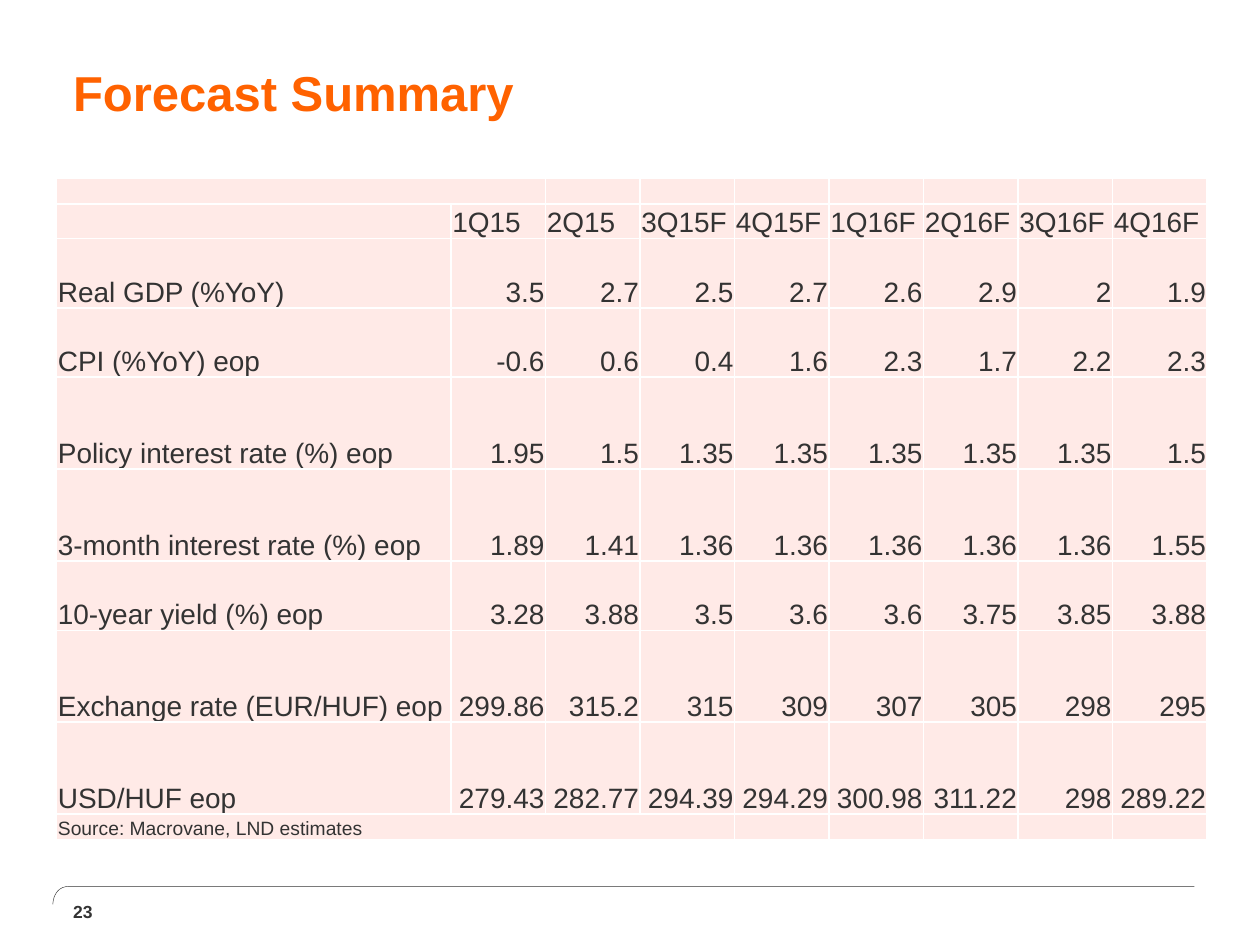
import pptx
import pptx.dml.color
import pptx.enum.text
import pptx.oxml
import pptx.oxml.ns
import pptx.util
from lxml import etree

COLORS = {"orange": "FF6200", "text": "333333", "cell": "FFEAE7", "border": "FFFFFF"}
FONT = "Arial"
SLIDE_WIDTH = pptx.util.Inches(10)
SLIDE_HEIGHT = pptx.util.Inches(7.5)

QUARTERS = ["1Q15", "2Q15", "3Q15F", "4Q15F", "1Q16F", "2Q16F", "3Q16F", "4Q16F"]
FORECASTS = [
    ("Real GDP (%YoY)", "3.5 2.7 2.5 2.7 2.6 2.9 2 1.9"),
    ("CPI (%YoY) eop", "-0.6 0.6 0.4 1.6 2.3 1.7 2.2 2.3"),
    ("Policy interest rate (%) eop", "1.95 1.5 1.35 1.35 1.35 1.35 1.35 1.5"),
    ("3-month interest rate (%) eop", "1.89 1.41 1.36 1.36 1.36 1.36 1.36 1.55"),
    ("10-year yield (%) eop", "3.28 3.88 3.5 3.6 3.6 3.75 3.85 3.88"),
    ("Exchange rate (EUR/HUF) eop", "299.86 315.2 315 309 307 305 298 295"),
    ("USD/HUF eop", "279.43 282.77 294.39 294.29 300.98 311.22 298 289.22"),
]
SOURCE = "Source: Macrovane, LND estimates"

# Shares of the slide, in percent of its width or height
LABEL_WIDTH, QUARTER_WIDTH = 31.3, 7.5
THIN, MEDIUM, TALL = 2.67, 7.33, 9.73
ROW_HEIGHTS = [THIN, THIN, MEDIUM, MEDIUM, TALL, TALL, MEDIUM, TALL, TALL, THIN]


def across(percent):
    return int(SLIDE_WIDTH * percent / 100)


def down(percent):
    return int(SLIDE_HEIGHT * percent / 100)


def rgb(name):
    return pptx.dml.color.RGBColor.from_string(COLORS[name])


def set_font(paragraph, size, color, bold=False):
    font = paragraph.font
    font.name = FONT
    font.size = pptx.util.Pt(size)
    font.bold = bold
    font.color.rgb = rgb(color)


def add_label(slide, box, text, size, color):
    """Place one bold, vertically centred line of text; return its paragraph."""
    left, top, width, height = box
    label = slide.shapes.add_textbox(across(left), down(top), across(width), down(height))
    frame = label.text_frame
    frame.word_wrap = True
    frame.vertical_anchor = pptx.enum.text.MSO_ANCHOR.MIDDLE
    frame.margin_left = frame.margin_right = frame.margin_top = frame.margin_bottom = 0
    paragraph = frame.paragraphs[0]
    paragraph.text = text
    set_font(paragraph, size, color, bold=True)
    return paragraph


def add_title(slide, box):
    paragraph = add_label(slide, box, "Forecast Summary", 28, "orange")
    paragraph.line_spacing = pptx.util.Pt(28)


def add_footer(slide, box):
    """Draw a rule whose left end bends down, with the page number below it."""
    left, top, width, height = box
    bend_width = 1.3
    steps = [step / 12 for step in range(13)]
    bend = [
        (across(left + bend_width * (1 - t) ** 3), down(top + height * (3 * t**2 - 2 * t**3)))
        for t in steps
    ]
    builder = slide.shapes.build_freeform(across(left + width), down(top))
    builder.add_line_segments(bend, close=False)
    rule = builder.convert_to_shape()
    rule.shadow.inherit = False
    rule.fill.background()
    rule.line.color.rgb = rgb("text")
    rule.line.width = pptx.util.Pt(0.25)
    add_label(slide, (left + 1.6, top + 1.2, 4.1, 2.8), "23", 10, "text")


def style_cell(cell):
    cell.fill.solid()
    cell.fill.fore_color.rgb = rgb("cell")
    cell.vertical_anchor = pptx.enum.text.MSO_ANCHOR.BOTTOM
    cell.margin_left = cell.margin_right = cell.margin_top = pptx.util.Inches(0.01)
    cell.margin_bottom = 0
    properties = cell._tc.get_or_add_tcPr()
    for index, side in enumerate(("lnL", "lnR", "lnT", "lnB")):
        border = pptx.oxml.parse_xml(
            f'<a:{side} {pptx.oxml.ns.nsdecls("a")} w="12700"><a:solidFill>'
            f'<a:srgbClr val="{COLORS["border"]}"/></a:solidFill></a:{side}>'
        )
        properties.insert(index, border)


def write_cell(cell, text, size, alignment):
    paragraph = cell.text_frame.paragraphs[0]
    if text:
        paragraph.text = text
        paragraph.alignment = alignment
        set_font(paragraph, size, "text")
    else:
        # A small end mark keeps an empty cell from stretching its row
        etree.SubElement(paragraph._p, pptx.oxml.ns.qn("a:endParaRPr"), sz="800")


def add_forecast_table(slide, box):
    left, top, width, height = box
    blanks = [""] * len(QUARTERS)
    rows = [["", *blanks], ["", *QUARTERS]]
    rows += [[label, *values.split()] for label, values in FORECASTS]
    rows.append([SOURCE, *blanks])
    last = len(rows) - 1

    frame = slide.shapes.add_table(
        len(rows), len(rows[0]), across(left), down(top), across(width), down(height)
    )
    table = frame.table
    table.first_row = table.horz_banding = False
    for index, column in enumerate(table.columns):
        column.width = across(QUARTER_WIDTH if index else LABEL_WIDTH)
    for row, row_height in zip(table.rows, ROW_HEIGHTS):
        row.height = down(row_height)

    for row_index, row in enumerate(rows):
        for column_index, text in enumerate(row):
            cell = table.cell(row_index, column_index)
            style_cell(cell)
            is_value = 1 < row_index < last and column_index > 0
            align = pptx.enum.text.PP_ALIGN
            size = 11 if row_index == last else 16
            write_cell(cell, text, size, align.RIGHT if is_value else align.LEFT)
    table.cell(0, 0).merge(table.cell(0, 1))
    table.cell(last, 0).merge(table.cell(last, 3))


def main():
    presentation = pptx.Presentation()
    presentation.slide_width = SLIDE_WIDTH
    presentation.slide_height = SLIDE_HEIGHT
    slide = presentation.slides.add_slide(presentation.slide_layouts[6])
    add_footer(slide, (4.2, 93.8, 90.6, 1.9))
    add_title(slide, (5.8, 4.1, 89.2, 12.4))
    table_width = LABEL_WIDTH + QUARTER_WIDTH * len(QUARTERS)
    add_forecast_table(slide, (4.5, 18.9, table_width, sum(ROW_HEIGHTS)))
    presentation.save("out.pptx")


if __name__ == "__main__":
    main()
